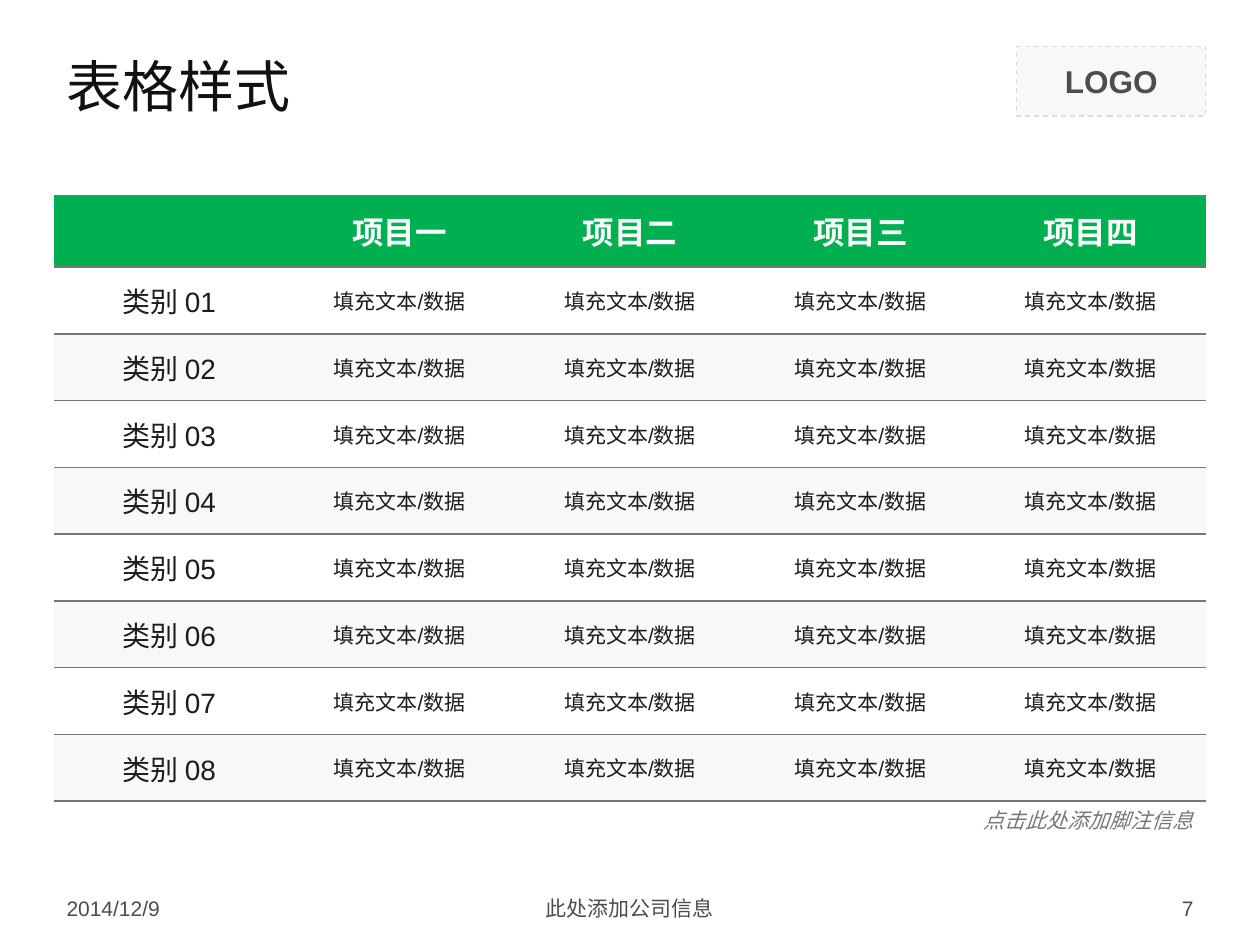
from lxml.etree import SubElement
from pptx import Presentation
from pptx.dml.color import RGBColor
from pptx.enum.dml import MSO_LINE
from pptx.enum.shapes import MSO_SHAPE
from pptx.enum.text import MSO_ANCHOR, MSO_AUTO_SIZE, PP_ALIGN
from pptx.oxml.ns import qn
from pptx.util import Inches, Pt

WIDTH, HEIGHT = 10, 7.5
MARGIN = 0.43
CONTENT = WIDTH - 2 * MARGIN
RIGHT = WIDTH - MARGIN
FOOTER_TOP, FOOTER_HEIGHT, FOOTER_WIDTH = 7.06, 0.29, 2.33
HEADERS = ["", "项目一", "项目二", "项目三", "项目四"]
CATEGORY_COUNT = 8
HEADER_HEIGHT, ROW_HEIGHT = 0.57, 0.53
GREEN, WHITE, PALE, GRAY = "00B050", "FFFFFF", "F8F8F8", "777777"
DARK, FOOTER_COLOR = "1C1C1C", "4C4C4C"
LEFT, CENTER, END = PP_ALIGN.LEFT, PP_ALIGN.CENTER, PP_ALIGN.RIGHT


def rgb(value):
    return RGBColor.from_string(value)


def box(*lengths):
    return [Inches(length) for length in lengths]


def write(tf, text, size, color, align=LEFT, **extra):
    p = tf.paragraphs[0]
    p.alignment = align
    r = p.add_run()
    r.text = text
    values = {"size": Pt(size), "name": "Arial", "bold": False, **extra}
    for name, value in values.items():
        setattr(r.font, name, value)
    r.font.color.rgb = rgb(color)


def add_text(s, place, text, size, color, align=LEFT, **extra):
    tf = s.shapes.add_textbox(*box(*place)).text_frame
    tf.word_wrap = True
    tf.vertical_anchor = MSO_ANCHOR.MIDDLE
    write(tf, text, size, color, align, **extra)
    return tf


def add_logo_box(s):
    sp = s.shapes.add_shape(MSO_SHAPE.RECTANGLE, *box(RIGHT - 1.5, 0.37, 1.5, 0.55))
    sp.shadow.inherit = False
    sp.fill.solid()
    sp.fill.fore_color.rgb = rgb(PALE)
    sp.line.color.rgb = rgb("DDDDDD")
    sp.line.width = Pt(0.75)
    sp.line.dash_style = MSO_LINE.DASH
    sp.text_frame.vertical_anchor = MSO_ANCHOR.MIDDLE
    write(sp.text_frame, "LOGO", 18, "4D4D4D", CENTER, bold=True)


def set_borders(cell):
    props = cell._tc.get_or_add_tcPr()
    for side, color in {"L": None, "R": None, "T": GRAY, "B": GRAY}.items():
        ln = SubElement(props, qn(f"a:ln{side}"), w=str(Pt(1)))
        if color:
            fill = SubElement(ln, qn("a:solidFill"))
            SubElement(fill, qn("a:srgbClr"), val=color)
        else:
            SubElement(ln, qn("a:noFill"))


def fill_cell(cell, text, size, color, fill, bold=False):
    set_borders(cell)
    cell.fill.solid()
    cell.fill.fore_color.rgb = rgb(fill)
    cell.vertical_anchor = MSO_ANCHOR.MIDDLE
    if text:
        write(cell.text_frame, text, size, color, CENTER, bold=bold)


def add_category_table(s):
    columns = len(HEADERS)
    height = HEADER_HEIGHT + CATEGORY_COUNT * ROW_HEIGHT
    place = box(MARGIN, 1.55, CONTENT, height)
    table = s.shapes.add_table(CATEGORY_COUNT + 1, columns, *place).table
    for column in table.columns:
        column.width = Inches(CONTENT / columns)
    for i, row in enumerate(table.rows):
        row.height = Inches(ROW_HEIGHT if i else HEADER_HEIGHT)
        for j, cell in enumerate(row.cells):
            if i == 0:
                fill_cell(cell, HEADERS[j], 18, WHITE, GREEN, bold=True)
            else:
                text, size = ("填充文本/数据", 12) if j else (f"类别 {i:02d}", 16)
                fill_cell(cell, text, size, DARK, WHITE if i % 2 else PALE)


def add_footnote(s):
    place = (RIGHT - 1.88, 6.36, 1.88, 0.3)
    tf = add_text(s, place, "点击此处添加脚注信息", 12, GRAY, END, italic=True)
    tf.word_wrap = False
    tf.auto_size = MSO_AUTO_SIZE.SHAPE_TO_FIT_TEXT
    tf.vertical_anchor = MSO_ANCHOR.TOP


def add_footer(s):
    middle = 3.17
    for left, width, text, align in (
        (MARGIN, FOOTER_WIDTH, "2014/12/9", LEFT),
        ((WIDTH - middle) / 2, middle, "此处添加公司信息", CENTER),
        (RIGHT - FOOTER_WIDTH, FOOTER_WIDTH, "7", END),
    ):
        place = (left, FOOTER_TOP, width, FOOTER_HEIGHT)
        add_text(s, place, text, 12, FOOTER_COLOR, align)


def main():
    prs = Presentation()
    prs.slide_width, prs.slide_height = box(WIDTH, HEIGHT)
    s = prs.slides.add_slide(prs.slide_layouts[6])
    add_logo_box(s)
    add_text(s, (MARGIN, 0.28, CONTENT, 0.79), "表格样式", 32, "111111", name="Montserrat")
    add_category_table(s)
    add_footer(s)
    add_footnote(s)
    prs.save("out.pptx")


if __name__ == "__main__":
    main()
